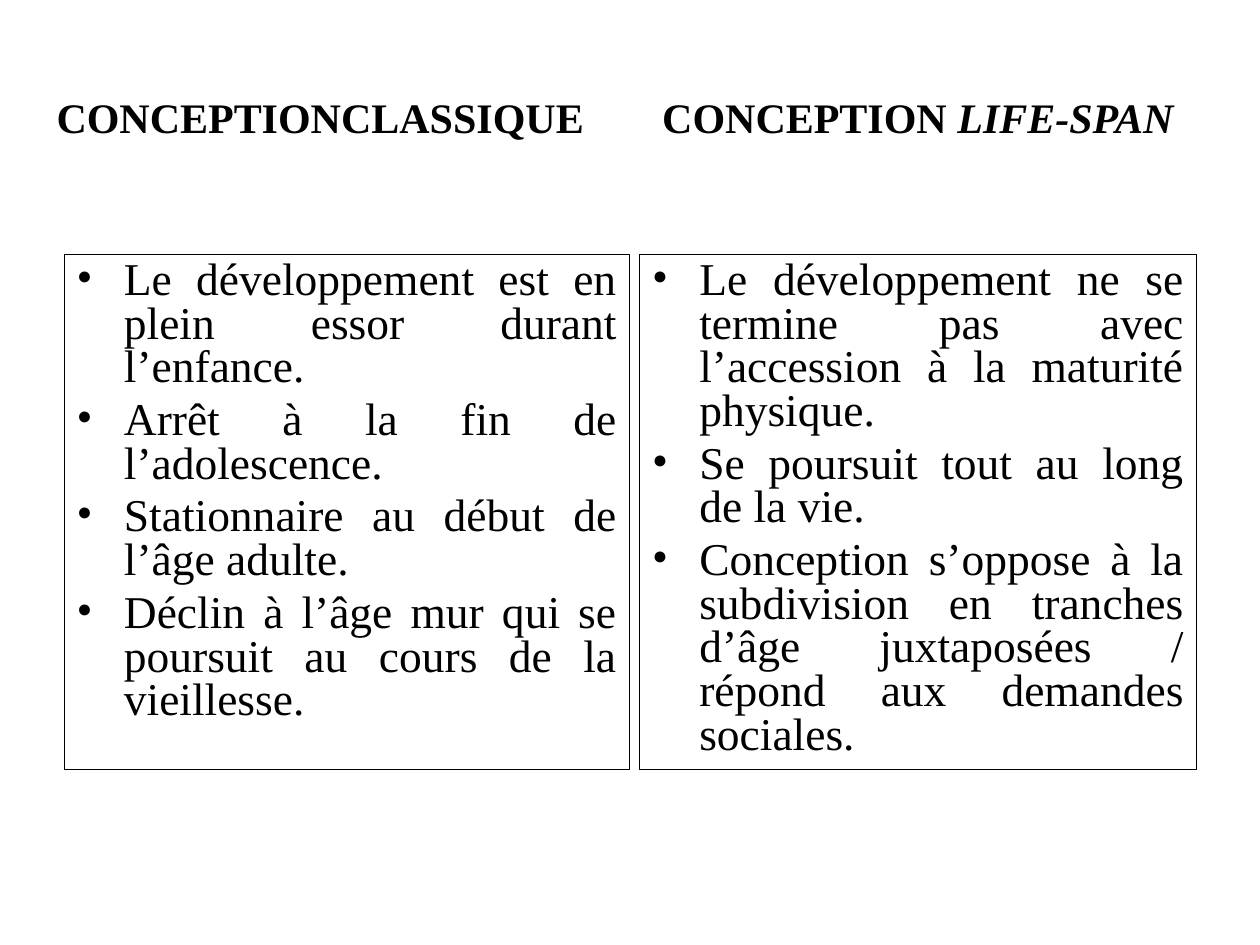
import pptx
import pptx.dml.color
import pptx.enum.shapes
import pptx.enum.text
import pptx.oxml.ns
import pptx.util
from lxml import etree

Pt = pptx.util.Pt


def color(value):
    return pptx.dml.color.RGBColor.from_string(value)


def apply(target, values):
    for name, value in values.items():
        setattr(target, name, value)


class ComparisonSlide:
    font_name = "Times New Roman"
    ink = "000000"
    heading_size = 24
    point_size = 26
    hanging = 27

    def __init__(self, deck):
        self.slide = deck.slides.add_slide(deck.slide_layouts[6])

    def run(self, paragraph, text, size, **style):
        run = paragraph.add_run()
        run.text = text
        apply(run.font, {"name": self.font_name, "size": Pt(size), **style})
        run.font.color.rgb = color(self.ink)

    def heading(self, left, top, width, height, parts):
        title = self.slide.shapes.add_textbox(Pt(left), Pt(top), Pt(width), Pt(height))
        apply(title.text_frame, {
            "word_wrap": True,
            "auto_size": pptx.enum.text.MSO_AUTO_SIZE.SHAPE_TO_FIT_TEXT,
        })
        for text, italic in parts:
            self.run(title.text_frame.paragraphs[0], text, self.heading_size,
                     bold=True, italic=italic)

    def bullet(self, paragraph):
        properties = paragraph._p.get_or_add_pPr()
        properties.set("marL", str(Pt(self.hanging)))
        properties.set("indent", str(-Pt(self.hanging)))
        for tag, name, value in (("a:buFont", "typeface", self.font_name),
                                 ("a:buChar", "char", "•")):
            mark = etree.SubElement(properties, pptx.oxml.ns.qn(tag))
            mark.set(name, value)

    def point_list(self, left, top, width, height, points):
        panel = self.slide.shapes.add_shape(
            pptx.enum.shapes.MSO_SHAPE.RECTANGLE,
            Pt(left), Pt(top), Pt(width), Pt(height))
        panel.shadow.inherit = False
        panel.fill.background()
        panel.line.color.rgb = color(self.ink)
        panel.line.width = Pt(0.75)
        frame = panel.text_frame
        apply(frame, {
            "word_wrap": True,
            "vertical_anchor": pptx.enum.text.MSO_ANCHOR.TOP,
        })
        for index, point in enumerate(points):
            paragraph = frame.add_paragraph() if index else frame.paragraphs[0]
            apply(paragraph, {
                "alignment": pptx.enum.text.PP_ALIGN.JUSTIFY,
                "line_spacing": 0.8,
                "space_before": Pt(0.2 * self.point_size),
            })
            self.bullet(paragraph)
            self.run(paragraph, point, self.point_size)


def main():
    deck = pptx.Presentation()
    apply(deck, {"slide_width": Pt(720), "slide_height": Pt(540)})
    comparison = ComparisonSlide(deck)

    classic_points = [
        "Le développement est en plein essor durant l’enfance.",
        "Arrêt à la fin de l’adolescence.",
        "Stationnaire au début de l’âge adulte.",
        "Déclin à l’âge mur qui se poursuit au cours de la vieillesse.",
    ]
    life_span_points = [
        "Le développement ne se termine pas avec l’accession à la maturité physique.",
        "Se poursuit tout au long de la vie.",
        "Conception s’oppose à la subdivision en tranches d’âge juxtaposées / "
        "répond aux demandes sociales.",
    ]
    panel_top, panel_height = 145.4, 294.5
    comparison.point_list(36.7, panel_top, 323, panel_height, classic_points)
    comparison.point_list(365.5, panel_top, 318.2, panel_height, life_span_points)

    heading_top, heading_height = 49, 36
    comparison.heading(25.2, heading_top, 334.8, heading_height,
                       [("CONCEPTIONCLASSIQUE", False)])
    comparison.heading(371.3, heading_top, 317.5, heading_height,
                       [("CONCEPTION ", False), ("LIFE-SPAN", True)])
    deck.save("out.pptx")


if __name__ == "__main__":
    main()
